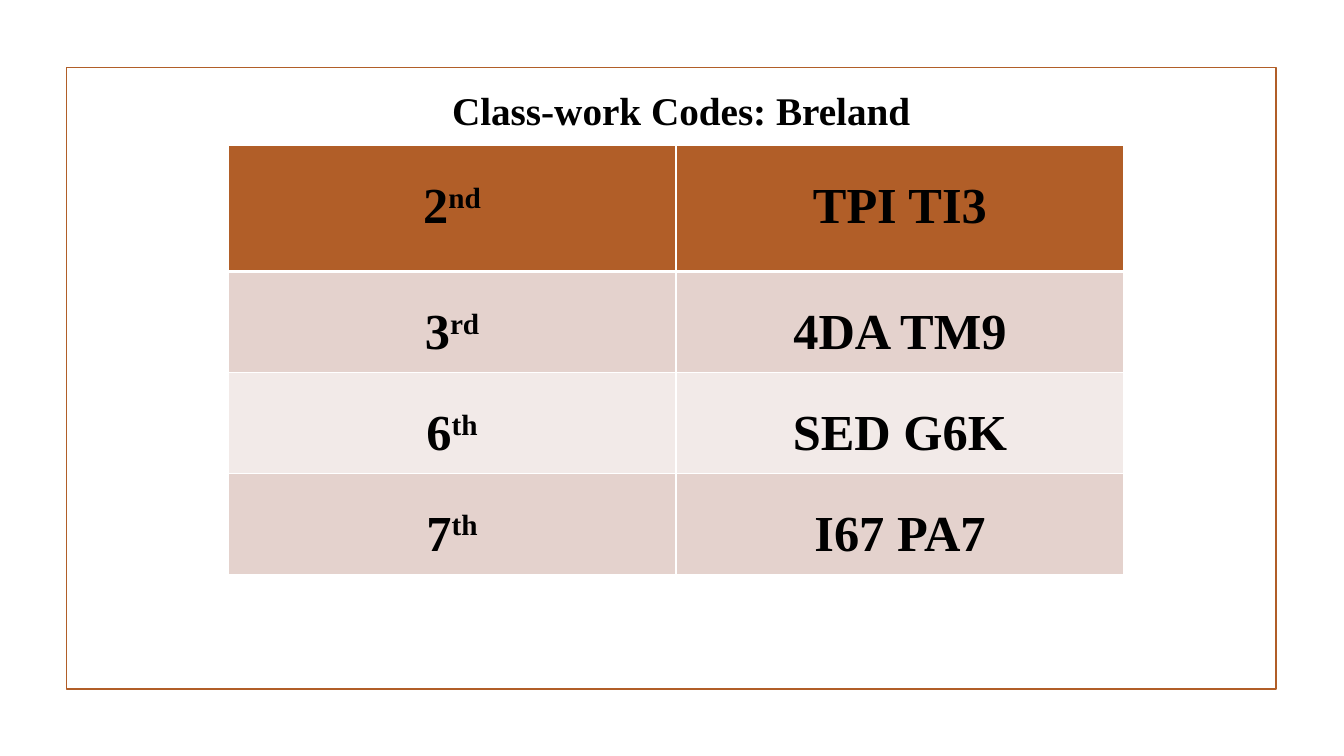
from dataclasses import dataclass

import pptx
import pptx.dml.color
import pptx.enum.text
import pptx.oxml
import pptx.oxml.ns
import pptx.util
from pptx.util import Pt

COLOURS = {
    "accent": "B15E28",
    "band_dark": "E4D2CD",
    "band_light": "F2EAE8",
    "border": "FFFFFF",
    "text": "000000",
}
FONT = "Times New Roman"
HEADER_HEIGHT, ROW_HEIGHT, COLUMN_WIDTH = 90, 65.7, 320


@dataclass
class ClassCode:
    period: str
    suffix: str
    code: str
    fill: str


CLASS_CODES = [
    ClassCode("2", "nd", "TPI TI3", "accent"),
    ClassCode("3", "rd", "4DA TM9", "band_dark"),
    ClassCode("6", "th", "SED G6K", "band_light"),
    ClassCode("7", "th", "I67 PA7", "band_dark"),
]


def colour(name: str) -> pptx.dml.color.RGBColor:
    return pptx.dml.color.RGBColor.from_string(COLOURS[name])


def add_span(para, text: str, size: float, raised: bool = False) -> None:
    span = para.add_run()
    span.text = text
    span.font.name = FONT
    span.font.size = Pt(size)
    span.font.bold = True
    span.font.color.rgb = colour("text")
    if raised:
        span._r.get_or_add_rPr().set("baseline", "30000")


def set_borders(cell, top: float, bottom: float) -> None:
    properties = cell._tc.get_or_add_tcPr()
    widths = {"lnL": 1, "lnR": 1, "lnT": top, "lnB": bottom}
    for position, (side, width) in enumerate(widths.items()):
        line = pptx.oxml.parse_xml(
            f'<a:{side} {pptx.oxml.ns.nsdecls("a")} w="{Pt(width)}">'
            f'<a:solidFill><a:srgbClr val="{COLOURS["border"]}"/></a:solidFill>'
            f"</a:{side}>"
        )
        properties.insert(position, line)


def add_frame(page) -> None:
    box = page.shapes.add_shape(
        pptx.enum.shapes.MSO_SHAPE.RECTANGLE, Pt(47.5), Pt(48.2), Pt(864), Pt(444.2)
    )
    box.shadow.inherit = False
    box.fill.background()
    box.line.color.rgb = colour("accent")
    box.line.width = Pt(1.25)


def add_title(page) -> None:
    title = page.shapes.title
    title.left, title.top = Pt(229), Pt(58.3)
    title.width, title.height = Pt(515), Pt(41)
    frame = title.text_frame
    frame.word_wrap = True
    frame.auto_size = pptx.enum.text.MSO_AUTO_SIZE.SHAPE_TO_FIT_TEXT
    frame.vertical_anchor = pptx.enum.text.MSO_ANCHOR.TOP
    para = frame.paragraphs[0]
    para.alignment = pptx.enum.text.PP_ALIGN.CENTER
    add_span(para, "Class-work Codes: Breland", 28)


def add_code_table(page, codes: list[ClassCode]) -> None:
    height = HEADER_HEIGHT + ROW_HEIGHT * (len(codes) - 1)
    table = page.shapes.add_table(
        len(codes), 2, Pt(162.9), Pt(104), Pt(2 * COLUMN_WIDTH), Pt(height)
    ).table
    for column in table.columns:
        column.width = Pt(COLUMN_WIDTH)
    for index, entry in enumerate(codes):
        table.rows[index].height = Pt(ROW_HEIGHT if index else HEADER_HEIGHT)
        # Period in the first cell, its code in the second
        for cell in table.rows[index].cells:
            cell.fill.solid()
            cell.fill.fore_color.rgb = colour(entry.fill)
            set_borders(cell, 3 if index == 1 else 1, 3 if index == 0 else 1)
            para = cell.text_frame.paragraphs[0]
            para.alignment = pptx.enum.text.PP_ALIGN.CENTER
            para.line_spacing = 1.5
        period_para = table.cell(index, 0).text_frame.paragraphs[0]
        add_span(period_para, entry.period, 36)
        add_span(period_para, entry.suffix, 36, raised=True)
        add_span(table.cell(index, 1).text_frame.paragraphs[0], entry.code, 36)


def main() -> None:
    deck = pptx.Presentation()
    deck.slide_width, deck.slide_height = Pt(960), Pt(540)
    page = deck.slides.add_slide(deck.slide_layouts.get_by_name("Title Only"))
    add_frame(page)
    add_code_table(page, CLASS_CODES)
    add_title(page)
    deck.save("out.pptx")


if __name__ == "__main__":
    main()
